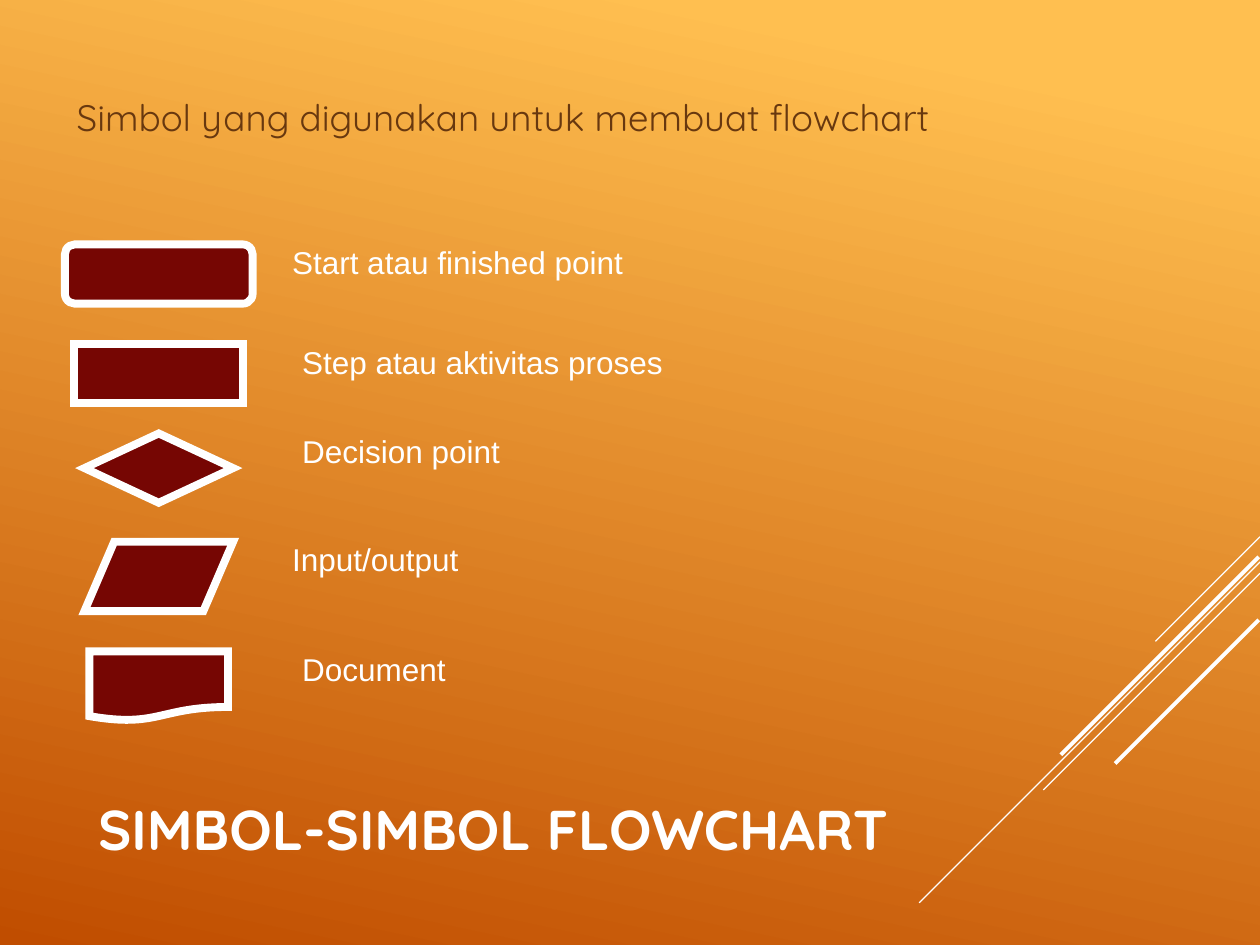
import pptx
import pptx.dml.color
import pptx.enum.shapes
import pptx.enum.text
import pptx.oxml.ns
import pptx.oxml.xmlchemy
import pptx.util

RGB = pptx.dml.color.RGBColor
KIND = pptx.enum.shapes.MSO_SHAPE
ANCHOR = pptx.enum.text.MSO_ANCHOR

WHITE = RGB(0xFF, 0xFF, 0xFF)
MAROON = RGB(0x76, 0x06, 0x03)
BROWN = RGB(0x68, 0x38, 0x0F)
AMBER = RGB(0xFF, 0xBF, 0x50)
RUST = RGB(0xC0, 0x4D, 0x00)

COLS, ROWS = 100, 75
CELL = pptx.util.Inches(0.1)

SYMBOLS = [
    (KIND.FLOWCHART_ALTERNATE_PROCESS, 0, 14.9, 4.7, 17.1, "Start atau finished point"),
    (KIND.FLOWCHART_PROCESS, 7.9, 13.4, 4.7, 17.9, "Step atau aktivitas proses"),
    (KIND.DIAMOND, 15, 11.8, 5.5, 17.9, "Decision point"),
    (KIND.FLOWCHART_DATA, 23.6, 11.8, 5.5, 17.1, "Input/output"),
    (KIND.FLOWCHART_DOCUMENT, 32.3, 11, 5.5, 17.9, "Document"),
]

STREAKS = [
    (0, 0, 8.3, 0.75),
    (0, 2, 27.05, 0.75),
    (0, 2.9, 17.2, 0.75),
    (0.1, 1.6, 15.7, 2.25),
    (0.1, 6.6, 11.4, 2.25),
]


def grid(*cells):
    return [round(cell * CELL) for cell in cells]


def write(slide, box, text, font="Arial", size=18, color=WHITE,
          bold=False, wrap=True, anchor=ANCHOR.TOP):
    frame = slide.shapes.add_textbox(*grid(*box)).text_frame
    frame.word_wrap = wrap
    frame.vertical_anchor = anchor
    run = frame.paragraphs[0].add_run()
    run.text = text
    run.font.name = font
    run.font.size = pptx.util.Pt(size)
    run.font.bold = bold
    run.font.color.rgb = color


def paint(slide):
    fill = slide.background.fill
    fill.gradient()
    fill.gradient_angle = 258
    for stop, place, color in zip(fill.gradient_stops, (0.1, 1), (AMBER, RUST)):
        stop.position = place
        stop.color.rgb = color


def draw_streaks(slide, box):
    left, top, width, height = box
    for inset, drop, run, weight in STREAKS:
        right, start = left + width - inset, top + drop
        line = slide.shapes.add_connector(
            pptx.enum.shapes.MSO_CONNECTOR.STRAIGHT,
            *grid(right, start, right - run, start + run))
        line.line.color.rgb = WHITE
        line.line.width = pptx.util.Pt(weight)
        props = line._element.spPr
        props.append(pptx.oxml.xmlchemy.OxmlElement("a:effectLst"))


def draw_symbol(slide, kind, box):
    shape = slide.shapes.add_shape(kind, *grid(*box))
    shape.shadow.inherit = False
    shape.fill.solid()
    shape.fill.fore_color.rgb = MAROON
    shape.line.color.rgb = WHITE
    shape.line.width = pptx.util.Pt(4.5)
    edge = shape._element.spPr.find(pptx.oxml.ns.qn("a:ln"))
    miter = pptx.oxml.xmlchemy.OxmlElement("a:miter")
    miter.set("lim", "800000")
    edge.append(miter)


def draw_legend(slide, box):
    left, top, width, height = box
    center = left + 7.5
    for kind, drop, wide, tall, indent, label in SYMBOLS:
        row = top + drop
        draw_symbol(slide, kind, (center - wide / 2, row, wide, tall))
        write(slide, (left + indent, row - 0.6, width - indent, 4), label)


def main():
    deck = pptx.Presentation()
    deck.slide_width, deck.slide_height = grid(COLS, ROWS)
    slide = deck.slides.add_slide(deck.slide_layouts[6])
    paint(slide)
    draw_streaks(slide, (73, 42.6, 27, 29))
    write(slide, (6.8, 57.4, 71.7, 16.7), "SIMBOL-SIMBOL FLOWCHART",
          font="Quicksand", size=32, bold=True, anchor=ANCHOR.MIDDLE)
    write(slide, (5.1, 3.4, 94.5, 11.8),
          "Simbol yang digunakan untuk membuat flowchart",
          font="Quicksand", size=21, color=BROWN, anchor=ANCHOR.MIDDLE)
    draw_legend(slide, (5.1, 19.4, 48.5, 37.8))
    deck.save("out.pptx")


if __name__ == "__main__":
    main()
